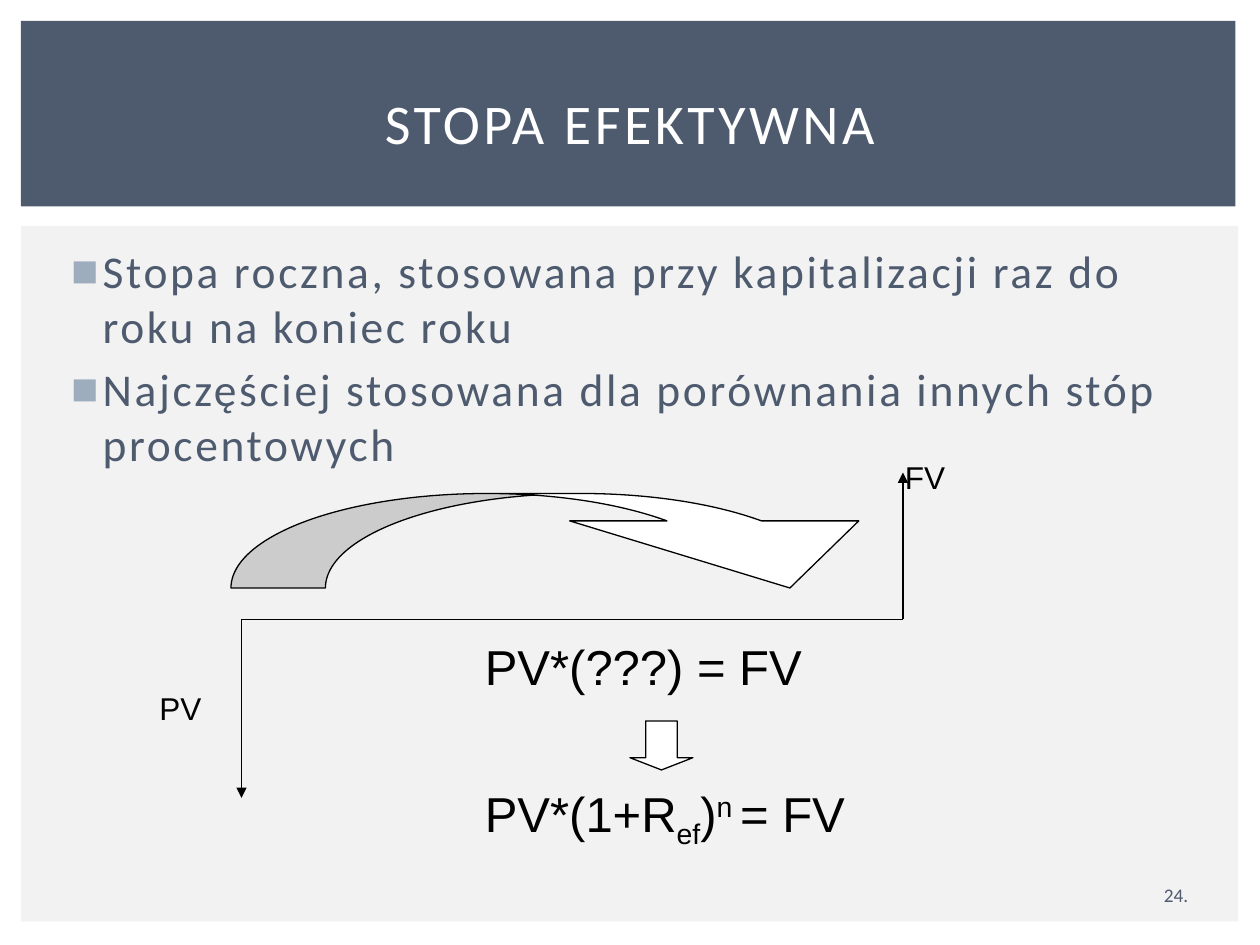
import pptx
import pptx.dml.color
import pptx.enum.shapes
import pptx.enum.text
import pptx.oxml.ns
import pptx.util
from lxml import etree

Pt = pptx.util.Pt
RGBColor = pptx.dml.color.RGBColor
Shape = pptx.enum.shapes.MSO_SHAPE
Align = pptx.enum.text.PP_ALIGN
Anchor = pptx.enum.text.MSO_ANCHOR
qn = pptx.oxml.ns.qn

WHITE = RGBColor(0xFF, 0xFF, 0xFF)
BLACK = RGBColor(0x00, 0x00, 0x00)
PALE = RGBColor(0xF2, 0xF2, 0xF2)
SLATE = RGBColor(0x4E, 0x5B, 0x6F)
BULLET = RGBColor(0x9D, 0xAD, 0xBE)

deck = pptx.Presentation()
deck.slide_width, deck.slide_height = Pt(720), Pt(540)
page = deck.slides.add_slide(deck.slide_layouts[6])


def add_block(kind, left, top, width, height, fill, line=None):
    block = page.shapes.add_shape(kind, Pt(left), Pt(top), Pt(width), Pt(height))
    block.shadow.inherit = False
    block.fill.solid()
    block.fill.fore_color.rgb = fill
    if line is None:
        block.line.fill.background()
    else:
        block.line.color.rgb = line
        block.line.width = Pt(0.75)
    return block


def add_text(left, top, width, height, paragraphs, size, font, color, spacing=0):
    """Each paragraph is a list of (text, baseline shift in percent) pairs."""
    box = page.shapes.add_textbox(Pt(left), Pt(top), Pt(width), Pt(height))
    frame = box.text_frame
    frame.word_wrap = True
    for index, pieces in enumerate(paragraphs):
        para = frame.add_paragraph() if index else frame.paragraphs[0]
        para.font.size = Pt(size)
        para.font.name = font
        para.font.color.rgb = color
        for text, shift in pieces:
            span = para.add_run()
            span.text = text
            properties = span.font._element
            if shift:
                properties.set("baseline", str(shift * 1000))
            if spacing:
                properties.set("spc", str(int(spacing * 100)))
    return frame


# Background panels
add_block(Shape.RECTANGLE, 12, 129, 695.5, 397.5, PALE)
add_block(Shape.RECTANGLE, 12, 12, 694, 106, SLATE)

# Title
title = add_text(30, 28, 660, 83, [[("STOPA EFEKTYWNA", 0)]], 32, "Calibri", WHITE, 2)
title.vertical_anchor = Anchor.MIDDLE
title.paragraphs[0].alignment = Align.CENTER

# Bulleted definition
points = [
    "Stopa roczna, stosowana przy kapitalizacji raz do roku na koniec roku",
    "Najczęściej stosowana dla porównania innych stóp procentowych",
]
body = add_text(30, 135.5, 662, 347, [[(point, 0)] for point in points],
                26, "Calibri", SLATE, 1.5)
body.paragraphs[1].space_before = Pt(5)
for para in body.paragraphs:
    properties = para._p.get_or_add_pPr()
    properties.set("marL", str(Pt(21.6)))
    properties.set("indent", str(Pt(-18)))
    bullet_color = etree.Element(qn("a:buClr"))
    etree.SubElement(bullet_color, qn("a:srgbClr"), val=str(BULLET))
    bullet_font = etree.Element(qn("a:buFont"), typeface="Arial")
    bullet = etree.Element(qn("a:buChar"), char="■")
    # The bullet settings come before the default run properties
    for position, item in enumerate((bullet_color, bullet_font, bullet)):
        properties.insert(len(properties) - 1, item)

# Time axis with the PV and FV cash flows
START, END, AXIS = 138, 516, 354
axis_lines = [
    (START, AXIS, END, AXIS, False),
    (START, AXIS, START, 456, True),
    (END, AXIS, END, 270, True),
]
for x1, y1, x2, y2, has_arrow in axis_lines:
    line = page.shapes.add_connector(pptx.enum.shapes.MSO_CONNECTOR.STRAIGHT,
                                     Pt(x1), Pt(y1), Pt(x2), Pt(y2))
    line.line.color.rgb = BLACK
    line.line.width = Pt(0.75)
    if has_arrow:
        etree.SubElement(line.line._get_or_add_ln(), qn("a:tailEnd"), type="triangle")
    etree.SubElement(line._element.spPr, qn("a:effectLst"))

# Curved arrow from PV to FV
growth = add_block(Shape.CURVED_DOWN_ARROW, 132, 282, 402, 54, WHITE, BLACK)
for index, value in enumerate((1.2, 3.06, 0.71)):
    growth.adjustments[index] = value

# Labels and formulas
add_text(84, 390, 54, 29, [[("PV", 0)]], 18, "Arial", BLACK)
add_text(510, 258, 96, 29, [[("FV", 0)]], 18, "Arial", BLACK)
add_text(270, 360, 414, 41, [[("PV*(???) = FV", 0)]], 28, "Arial", BLACK)
effective = [("PV*(1+R", 0), ("ef", -25), (")", 0), ("n ", 30), ("= FV", 0)]
add_text(270, 444, 414, 41, [effective], 28, "Arial", BLACK)

step = add_block(Shape.DOWN_ARROW, 360, 412, 36, 28, WHITE, BLACK)
step.adjustments[0] = 0.5
step.adjustments[1] = 0.25

# Page number
number = add_text(649, 500.5, 46, 21.5, [[("24.", 0)]], 11, "Calibri", SLATE)
number.vertical_anchor = Anchor.MIDDLE
number.paragraphs[0].alignment = Align.CENTER

deck.save("out.pptx")
